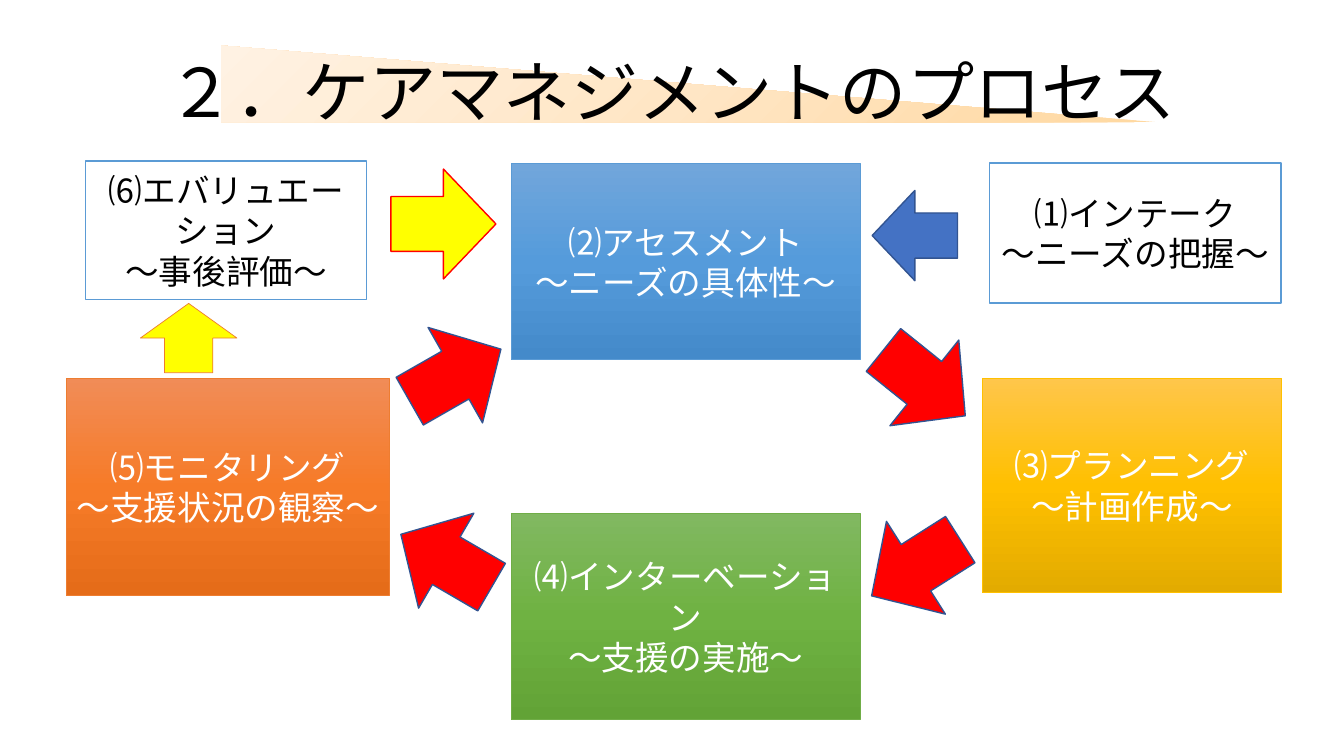
from copy import deepcopy

from lxml import etree
from pptx import Presentation
from pptx.dml.color import RGBColor
from pptx.enum.shapes import MSO_SHAPE
from pptx.enum.text import MSO_ANCHOR, MSO_AUTO_SIZE, PP_ALIGN
from pptx.oxml.ns import qn
from pptx.util import Pt

RECTANGLE = MSO_SHAPE.RECTANGLE
RIGHT_TRIANGLE = MSO_SHAPE.RIGHT_TRIANGLE
UP_ARROW = MSO_SHAPE.UP_ARROW
LEFT_ARROW = MSO_SHAPE.LEFT_ARROW
CENTER = PP_ALIGN.CENTER
MIDDLE = MSO_ANCHOR.MIDDLE
NO_AUTOFIT = MSO_AUTO_SIZE.NONE

FONT = "Noto Sans CJK JP"
COLORS = {
    "black": "000000", "white": "FFFFFF", "red": "FF0000", "yellow": "FFFF00",
    "blue": "5B9BD5", "royal": "4472C4", "navy": "325491",
    "orange": "ED7D31", "gold": "FFC000", "green": "70AD47",
}
GRADIENTS = {
    "peach": ("FFD8A0", "FFE6C5", "FFF2E3"),
    "blue": ("71A6DB", "559BDB", "448ACA"),
    "gold": ("FFC64B", "FFC000", "E3AB00"),
    "green": ("81B861", "6FB242", "62A336"),
    "orange": ("F18C57", "F67B28", "E56C19"),
}
DOWNWARD, TO_UPPER_LEFT = 270, 135  # counter-clockwise degrees

# Box in points, text, theme colour (None: white card with black text)
STEPS = [
    ((707, 116.5, 208, 100), "⑴インテーク\n～ニーズの把握～", None),
    ((701.5, 270, 214, 153.5), "⑶プランニング\n～計画作成～", "gold"),
    ((61, 115, 201, 99), "⑹エバリュエーション\n～事後評価～", None),
    ((365, 367, 249.5, 147), "⑷インターベーション\n～支援の実施～", "green"),
    ((47.5, 270.5, 230.5, 155), "⑸モニタリング\n～支援状況の観察～", "orange"),
    ((365, 117, 249.5, 140), "⑵アセスメント\n～ニーズの具体性～", "blue"),
]

# Left and top of each large arrow, rotation, fill, line
CYCLE_ARROW_SIZE = (78.5, 75)
CYCLE_ARROWS = [
    (621, 236, 128.8, "red", "navy"),
    (615, 368, 237.6, "red", "navy"),
    (279.5, 363, 300.2, "red", "navy"),
    (286, 230.5, 60.3, "red", "navy"),
    (277.5, 122.5, 90, "yellow", "red"),
]


def rgb(name):
    return RGBColor.from_string(COLORS[name])


def add_plain_shape(slide, kind, box, line=None, line_width=1):
    shape = slide.shapes.add_shape(kind, *map(Pt, box))
    shape.shadow.inherit = False
    if line:
        shape.line.color.rgb = rgb(line)
        shape.line.width = Pt(line_width)
    else:
        shape.line.fill.background()
    return shape


def fill_solid(shape, color):
    shape.fill.solid()
    shape.fill.fore_color.rgb = rgb(color)


def fill_gradient(shape, name, angle):
    shape.fill.gradient()
    shape.fill.gradient_angle = angle
    stop_list = shape._element.spPr.find(".//" + qn("a:gsLst"))
    stop_list.append(deepcopy(stop_list[-1]))
    for index, (stop, color) in enumerate(zip(shape.fill.gradient_stops, GRADIENTS[name])):
        stop.position = index / 2
        stop.color.rgb = RGBColor.from_string(color)


def write_text(shape, text, size, color, line_spacing=None):
    frame = shape.text_frame
    frame.text = text
    frame.word_wrap = True
    frame.auto_size = NO_AUTOFIT
    frame.vertical_anchor = MIDDLE
    for paragraph in frame.paragraphs:
        paragraph.alignment = CENTER
        paragraph.line_spacing = line_spacing
        font = paragraph.font
        font.name, font.size = FONT, Pt(size)
        font.color.rgb = rgb(color)
        # East Asian glyphs take their own typeface entry
        east_asian = etree.Element(qn("a:ea"), typeface=FONT)
        font._element.find(qn("a:latin")).addnext(east_asian)


def add_heading(slide, box):
    left, top, width, height = box
    title = slide.shapes.title
    title.left, title.top, title.width, title.height = map(Pt, box)
    write_text(title, "２．ケアマネジメントのプロセス", 48, "black", 0.9)
    # Wedge behind the title
    wedge = add_plain_shape(slide, RIGHT_TRIANGLE, (left + 67, top - 9.5, 671, 55))
    fill_gradient(wedge, "peach", TO_UPPER_LEFT)
    title._element.addprevious(wedge._element)


def add_step(slide, box, text, theme):
    step = add_plain_shape(slide, RECTANGLE, box, theme or "blue", 0.5 if theme else 1)
    if theme:
        fill_gradient(step, theme, DOWNWARD)
    else:
        fill_solid(step, "white")
    write_text(step, text, 24, "white" if theme else "black")


def add_arrow(slide, kind, box, rotation, fill, line, line_width=1):
    arrow = add_plain_shape(slide, kind, box, line, line_width)
    arrow.rotation = rotation
    fill_solid(arrow, fill)


def add_process(slide):
    for box, text, theme in STEPS:
        add_step(slide, box, text, theme)
    # Entry from intake, and monitoring up to evaluation
    add_arrow(slide, LEFT_ARROW, (623, 136, 61, 64.5), 0, "royal", "navy")
    add_arrow(slide, LEFT_ARROW, (110, 207, 49.5, 69), 90, "yellow", "orange", 0.5)
    # Arrows around the cycle
    for left, top, rotation, fill, line in CYCLE_ARROWS:
        add_arrow(slide, UP_ARROW, (left, top, *CYCLE_ARROW_SIZE), rotation, fill, line)


def main():
    presentation = Presentation()
    presentation.slide_width, presentation.slide_height = Pt(960), Pt(540)
    slide = presentation.slides.add_slide(presentation.slide_layouts[5])
    add_heading(slide, (91, 42, 778, 52.5))
    add_process(slide)
    presentation.save("out.pptx")


if __name__ == "__main__":
    main()
